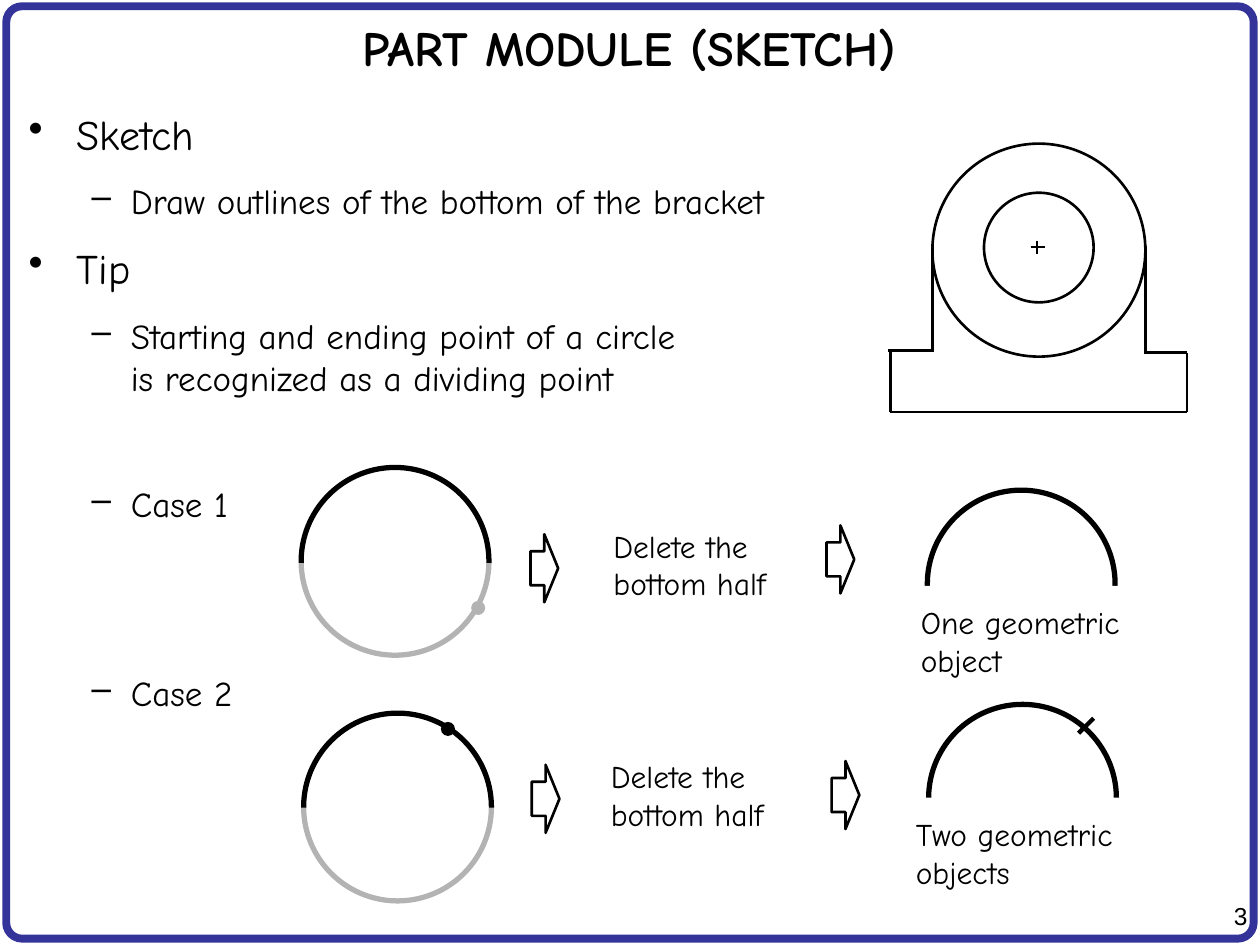
"""Build the sketch slide of the part module on a grid of 100 columns by 75 rows."""
from lxml import etree
from pptx import Presentation
from pptx.dml.color import RGBColor
from pptx.enum.shapes import MSO_CONNECTOR, MSO_SHAPE
from pptx.enum.text import MSO_ANCHOR, PP_ALIGN
from pptx.oxml.ns import qn
from pptx.util import Inches, Pt

ELLIPSE, RECTANGLE = MSO_SHAPE.OVAL, MSO_SHAPE.RECTANGLE
ROUNDED, ARROW = MSO_SHAPE.ROUNDED_RECTANGLE, MSO_SHAPE.RIGHT_ARROW
STRAIGHT = MSO_CONNECTOR.STRAIGHT
LEFT, CENTER, RIGHT = PP_ALIGN.LEFT, PP_ALIGN.CENTER, PP_ALIGN.RIGHT
MIDDLE = MSO_ANCHOR.MIDDLE

COLORS = {name: RGBColor.from_string(value) for name, value in
          {"ink": "000000", "paper": "FFFFFF", "frame": "333399"}.items()}
FONT = "Comic Neue"

deck = Presentation()
deck.slide_width, deck.slide_height = Inches(10), Inches(7.5)
CELL = deck.slide_width / 100
page = deck.slides.add_slide(deck.slide_layouts[5])


def add_outline(parent, kind, cells, line=None, width=1.5, fill=None):
    shape = parent.shapes.add_shape(kind, *[round(cell * CELL) for cell in cells])
    shape.shadow.inherit = False
    if fill:
        shape.fill.solid()
        shape.fill.fore_color.rgb = COLORS[fill]
    else:
        shape.fill.background()
    if line:
        shape.line.color.rgb = COLORS[line]
        shape.line.width = Pt(width)
    else:
        shape.line.fill.background()
    return shape


def add_words(box, text, size, font=FONT, align=LEFT, bold=False):
    box.text_frame.word_wrap = True
    para = box.text_frame.paragraphs[0]
    para.text = text
    para.alignment = align
    for span in para.runs:
        span.font.size, span.font.name, span.font.bold = Pt(size), font, bold
        span.font.color.rgb = COLORS["ink"]


frame = add_outline(page, ROUNDED, (0.5, 0.5, 99, 74), "frame", 4.5)
frame.adjustments[0] = 0.017

title = page.shapes.title
title.left, title.top, title.width, title.height = [
    round(cell * CELL) for cell in (0.4, 0.5, 99, 6.5)]
title.text_frame.vertical_anchor = MIDDLE
add_words(title, "PART MODULE (SKETCH)", 28, align=CENTER, bold=True)

outline = [
    (0, 12, "Sketch"),
    (1, 12, "Draw outlines of the bottom of the bracket"),
    (0, 12, "Tip"),
    (1, 12, "Starting and ending point of a circle\vis recognized as a dividing point"),
    (1, 48, "Case 1"),
    (1, 84, "Case 2"),
]
levels = [("•", 24, 0.38, 0.38), ("–", 20, 0.81, 0.31)]
body = page.shapes.add_textbox(*[round(cell * CELL) for cell in (1.3, 8.1, 97.4, 64.2)])
body.text_frame.word_wrap = True
for index, (level, space, text) in enumerate(outline):
    bullet, size, margin, hanging = levels[level]
    para = body.text_frame.paragraphs[0] if index == 0 else body.text_frame.add_paragraph()
    para.text = text
    para.level = level
    para.space_before = Pt(space)
    properties = para._p.get_or_add_pPr()
    properties.set("marL", str(Inches(margin)))
    properties.set("indent", str(-Inches(hanging)))
    etree.SubElement(properties, qn("a:buChar"), char=bullet)
    for span in para.runs:
        span.font.size, span.font.name = Pt(size), FONT
        span.font.color.rgb = COLORS["ink"]

cases = [
    {"circle": (23.9, 37.1), "dot": (37.5, 47.8), "arc": (73.6, 38.9),
     "mask": (71.5, 46.5, 19.6, 8.2), "veil": (21.6, 44.7, 19.6, 9.4),
     "arrows": [(42.1, 42.4), (65.6, 41.7)],
     "step": (47.7, 41.3), "result": (72.1, 47.4), "text": "One geometric object"},
    {"circle": (24.1, 56.6), "dot": (35.1, 57.4), "arc": (73.7, 55.9),
     "mask": (71.7, 63.3, 19.6, 9.4), "veil": (21.7, 64.1, 19.6, 8.3),
     "arrows": [(42.2, 60.7), (66, 60.4)],
     "step": (47.5, 59.6), "result": (71.7, 64.2), "text": "Two geometric objects"},
]
for case in cases:
    add_outline(page, ELLIPSE, (*case["circle"], 14.9, 14.9), "ink", 3)
    add_outline(page, ELLIPSE, (*case["dot"], 0.9, 0.9), "ink", fill="ink")
    add_outline(page, ELLIPSE, (*case["arc"], 14.9, 14.9), "ink", 3)
    add_outline(page, RECTANGLE, case["mask"], fill="paper")
    veil = add_outline(page, RECTANGLE, case["veil"], fill="paper")
    color = veil._element.spPr.find(qn("a:solidFill"))[0]
    etree.SubElement(color, qn("a:alpha"), val="70000")
    for corner in case["arrows"]:
        add_outline(page, ARROW, (*corner, 2.2, 5.4), "ink")
    for corner, width, text in [(case["step"], 17.2, "Delete the bottom half"),
                                (case["result"], 20.7, case["text"])]:
        box = page.shapes.add_textbox(*[round(cell * CELL) for cell in (*corner, width, 7.1)])
        add_words(box, text, 18)

bracket = page.shapes.add_group_shape()
add_outline(bracket, ELLIPSE, (78.1, 15.3, 8.7, 8.7), "ink")
add_outline(bracket, ELLIPSE, (74, 11.4, 16.9, 16.9), "ink")
lines = [
    (bracket, 1.5, (74, 27.8, 74, 19.4)),
    (bracket, 1.5, (90.9, 28.1, 90.9, 19.5)),
    (bracket, 1.5, (70.6, 32.7, 94.2, 32.7)),
    (bracket, 1.5, (70.7, 32.7, 70.7, 27.7)),
    (bracket, 1.5, (94.2, 32.7, 94.2, 28)),
    (bracket, 1.5, (70.5, 27.8, 74.1, 27.8)),
    (bracket, 1.5, (90.9, 28, 94.2, 28)),
    (bracket, 1, (81.8, 19.6, 82.9, 19.6)),
    (bracket, 1, (82.3, 19.1, 82.3, 20.2)),
    (page, 2.5, (85.6, 58.2, 86.8, 57)),
]
for parent, width, ends in lines:
    line = parent.shapes.add_connector(STRAIGHT, *[round(cell * CELL) for cell in ends])
    line.line.color.rgb = COLORS["ink"]
    line.line.width = Pt(width)
    etree.SubElement(line._element.spPr, qn("a:effectLst"))

number = page.shapes.add_textbox(*[round(cell * CELL) for cell in (94.6, 71, 5.4, 3.3)])
add_words(number, "3", 14, "Arial", RIGHT)

deck.save("out.pptx")
